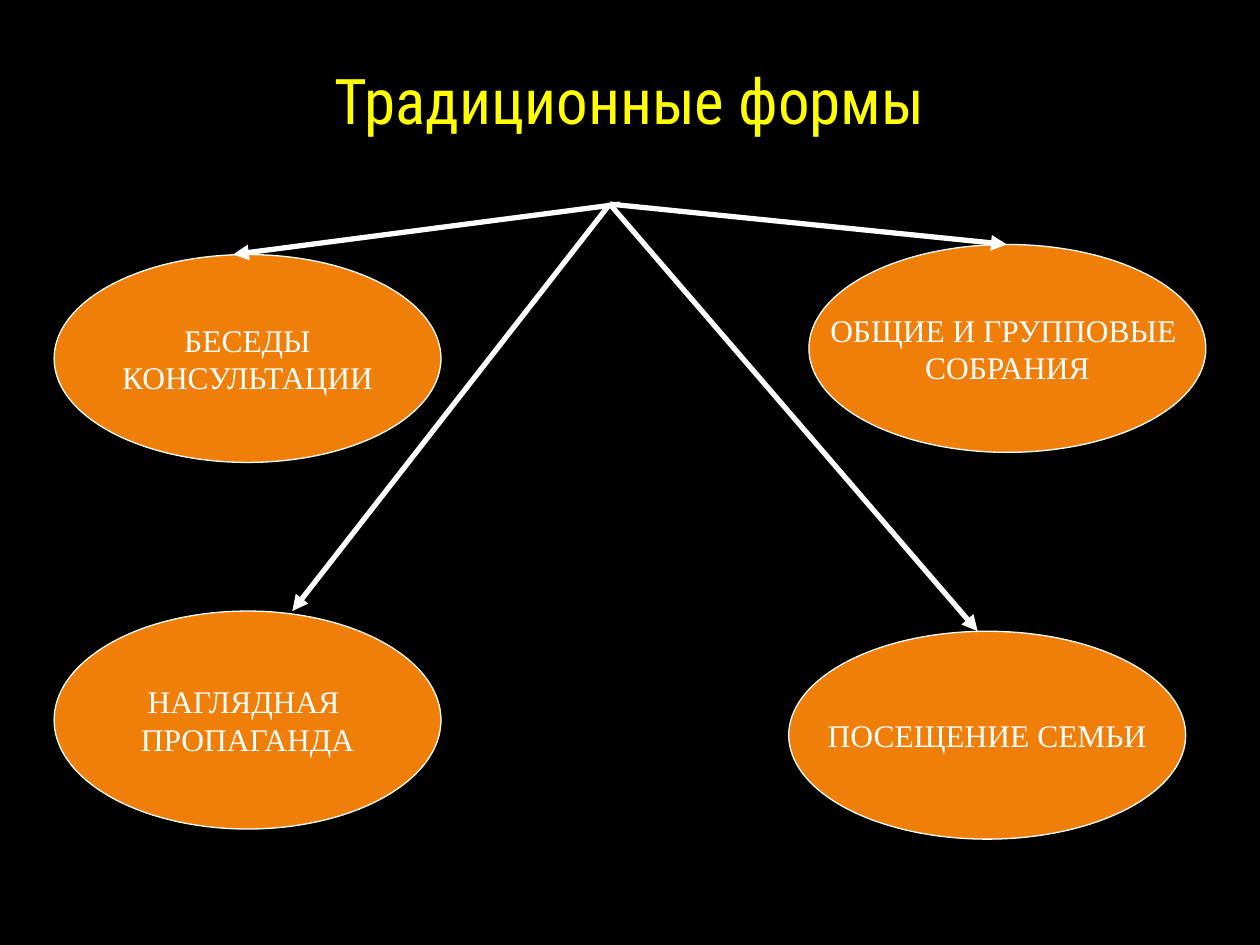
"""Build a slide of four traditional forms fanned out under a title."""
import dataclasses

import lxml.etree
import pptx
import pptx.dml.color
import pptx.enum.shapes
import pptx.enum.text
import pptx.oxml.ns
import pptx.util

Inches = pptx.util.Inches
WHITE = "FFFFFF"


@dataclasses.dataclass
class Oval:
    text: str
    left: float
    top: float
    width: float
    height: float = 1.65


@dataclasses.dataclass
class Arrow:
    x: float
    y: float
    start: float = 4.84


OVALS = [
    Oval("БЕСЕДЫ\nКОНСУЛЬТАЦИИ", 0.43, 2.02, 3.07),
    Oval("ОБЩИЕ И ГРУППОВЫЕ \nСОБРАНИЯ", 6.42, 1.94, 3.15),
    Oval("НАГЛЯДНАЯ \nПРОПАГАНДА", 0.43, 4.85, 3.07, 1.73),
    Oval("ПОСЕЩЕНИЕ СЕМЬИ", 6.26, 5.01, 3.15),
]
ARROWS = [
    Arrow(1.85, 2.02, 4.92),
    Arrow(7.99, 1.94),
    Arrow(7.76, 5.01),
    Arrow(2.32, 4.85),
]
HUB = 1.62


def paint(color, value: str) -> None:
    color.rgb = pptx.dml.color.RGBColor.from_string(value)


def fill(target, value: str) -> None:
    target.solid()
    paint(target.fore_color, value)


def style(frame, size: int, font: str, value: str) -> None:
    frame.word_wrap = False
    for para in frame.paragraphs:
        para.alignment = pptx.enum.text.PP_ALIGN.CENTER
        para.font.size = pptx.util.Pt(size)
        para.font.name = font
        paint(para.font.color, value)


def add_title(slide, text: str) -> None:
    title = slide.shapes.title
    title.left, title.top = Inches(1.3), Inches(0.44)
    title.width, title.height = Inches(7.4), Inches(1.26)
    frame = title.text_frame
    frame.text = text
    frame.vertical_anchor = pptx.enum.text.MSO_ANCHOR.TOP
    frame.auto_size = pptx.enum.text.MSO_AUTO_SIZE.NONE
    style(frame, 36, "Roboto Condensed", "FFFF00")


def add_oval(slide, oval: Oval) -> None:
    box = map(Inches, (oval.left, oval.top, oval.width, oval.height))
    shape = slide.shapes.add_shape(pptx.enum.shapes.MSO_SHAPE.OVAL, *box)
    shape.shadow.inherit = False
    fill(shape.fill, "F07F09")
    fill(shape.line.fill, WHITE)
    shape.line.width = pptx.util.Pt(0.75)
    frame = shape.text_frame
    frame.text = oval.text
    frame.vertical_anchor = pptx.enum.text.MSO_ANCHOR.MIDDLE
    style(frame, 18, "Times New Roman", WHITE)


def add_arrow(slide, arrow: Arrow) -> None:
    ends = map(Inches, (arrow.start, HUB, arrow.x, arrow.y))
    kind = pptx.enum.shapes.MSO_CONNECTOR.STRAIGHT
    line = slide.shapes.add_connector(kind, *ends)
    fill(line.line.fill, WHITE)
    line.line.width = pptx.util.Pt(3)
    qn = pptx.oxml.ns.qn
    props = line.line._get_or_add_ln()
    lxml.etree.SubElement(props, qn("a:tailEnd"), type="triangle")
    lxml.etree.SubElement(props.getparent(), qn("a:effectLst"))


def main() -> None:
    deck = pptx.Presentation()
    deck.slide_width, deck.slide_height = Inches(10), Inches(7.5)
    slide = deck.slides.add_slide(deck.slide_layouts[5])
    fill(slide.background.fill, "000000")
    add_title(slide, "Традиционные формы")
    for oval in OVALS:
        add_oval(slide, oval)
    for arrow in ARROWS:
        add_arrow(slide, arrow)
    deck.save("out.pptx")


if __name__ == "__main__":
    main()
